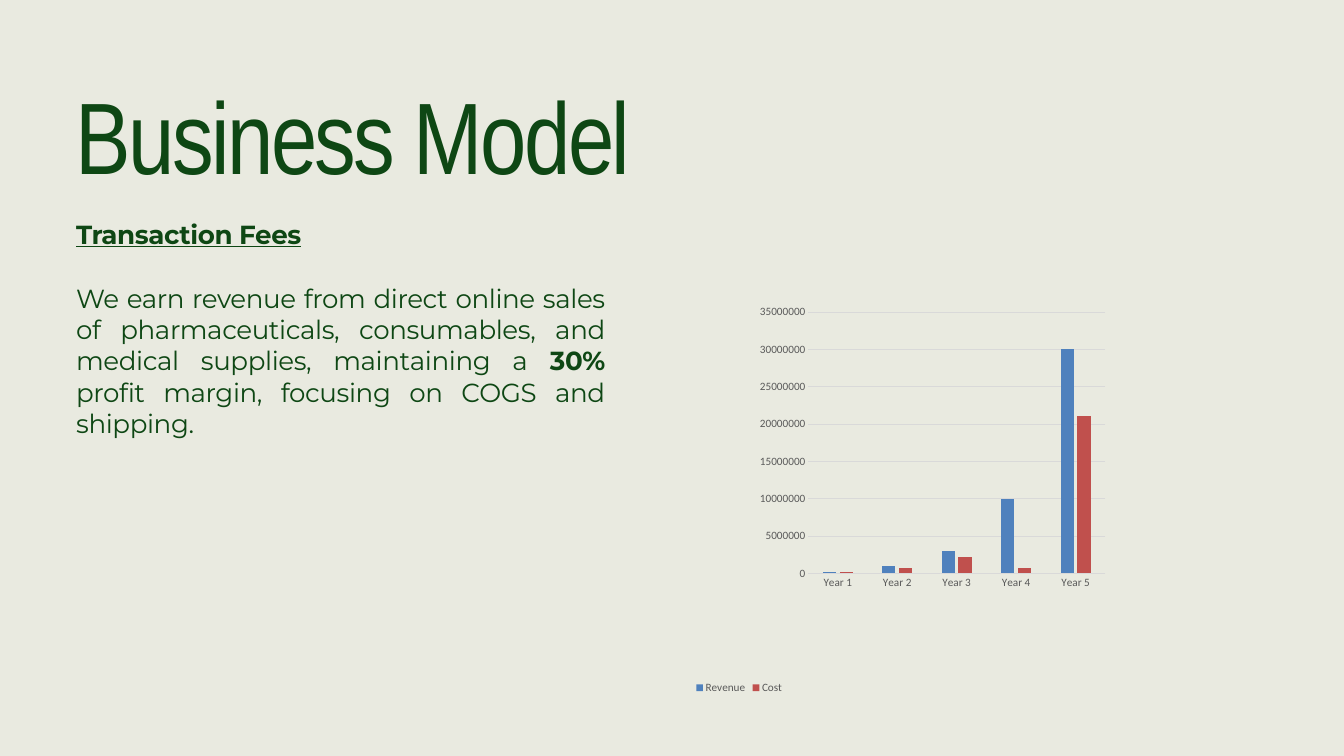
from pptx import Presentation
from pptx.chart.data import CategoryChartData
from pptx.dml.color import RGBColor
from pptx.enum.chart import XL_CHART_TYPE as ChartType, XL_LEGEND_POSITION as LegendPos, XL_TICK_MARK as Tick
from pptx.enum.text import MSO_AUTO_SIZE as AutoSize, PP_ALIGN as Align
from pptx.oxml import parse_xml
from pptx.oxml.ns import nsdecls
from pptx.util import Pt


def color(hex_string):
    return RGBColor.from_string(hex_string)


def write(paragraph, text, *, size, font, fill, bold=False, underline=False, tracking=0):
    run = paragraph.add_run()
    run.text = text
    run.font.size = Pt(size)
    run.font.name = font
    run.font.color.rgb = color(fill)
    run.font.bold = bold
    run.font.underline = underline
    run._r.get_or_add_rPr().set("spc", str(round(tracking * 100)))


class Deck:
    """Holds the style and the current slide, and adds each kind of element."""

    BACKGROUND, GREEN, GRAY, RULE = "E9EAE0", "0E4714", "595959", "D9D9D9"
    TITLE_FONT, BODY_FONT, CHART_FONT = "Arial Narrow", "Montserrat", "Calibri"

    def __init__(self, width, height):
        self.presentation = Presentation()
        self.presentation.slide_width = Pt(width)
        self.presentation.slide_height = Pt(height)
        self.slide = self.presentation.slides.add_slide(self.presentation.slide_layouts[6])
        background = self.slide.background.fill
        background.solid()
        background.fore_color.rgb = color(self.BACKGROUND)

    def text_frame(self, *box):
        frame = self.slide.shapes.add_textbox(*map(Pt, box)).text_frame
        frame.word_wrap = True
        frame.auto_size = AutoSize.SHAPE_TO_FIT_TEXT
        frame.margin_left = frame.margin_right = frame.margin_top = frame.margin_bottom = 0
        return frame

    def title(self, text, *box):
        heading = self.text_frame(*box).paragraphs[0]
        heading.line_spacing = Pt(94.7)
        write(heading, text, size=108.8, font=self.TITLE_FONT, fill=self.GREEN, tracking=-2.7)

    def body(self, heading, pieces, *box):
        frame = self.text_frame(*box)
        style = dict(size=28, font=self.BODY_FONT, fill=self.GREEN, tracking=-0.4)
        subtitle, explanation = frame.paragraphs[0], frame.add_paragraph()
        for paragraph in (subtitle, explanation):
            paragraph.alignment = Align.JUSTIFY
            paragraph._p.get_or_add_pPr().set("marL", str(Pt(0.9)))
        explanation.space_before = Pt(35)
        write(subtitle, heading, bold=True, underline=True, **style)
        for text, bold in pieces:
            write(explanation, text, bold=bold, **style)

    def chart_font(self, font):
        font.size = Pt(12)
        font.name = self.CHART_FONT
        font.color.rgb = color(self.GRAY)

    def rule(self, line):
        line.width = Pt(0.75)
        line.color.rgb = color(self.RULE)

    def column_chart(self, years, series, plot_area, *box):
        data = CategoryChartData(number_format="General")
        data.categories = years
        for name, values, _ in series:
            data.add_series(name, values)
        chart = self.slide.shapes.add_chart(ChartType.COLUMN_CLUSTERED, *map(Pt, box), data).chart
        self.chart_font(chart.font)
        chart.has_title = False
        chart.has_legend = True
        chart.legend.position = LegendPos.BOTTOM
        chart.legend.include_in_layout = False
        self.chart_font(chart.legend.font)

        columns = chart.plots[0]
        columns.vary_by_categories = False
        columns.gap_width, columns.overlap = 219, -27
        for column, (_, _, fill) in zip(columns.series, series):
            column.format.fill.solid()
            column.format.fill.fore_color.rgb = color(fill)
            column.invert_if_negative = False

        for axis in (chart.category_axis, chart.value_axis):
            axis.major_tick_mark = axis.minor_tick_mark = Tick.NONE
            self.chart_font(axis.tick_labels.font)
        self.rule(chart.category_axis.format.line)
        chart.value_axis.format.line.fill.background()
        chart.value_axis.has_major_gridlines = True
        self.rule(chart.value_axis.major_gridlines.format.line)
        self.place_plot(chart, plot_area)

    def place_plot(self, chart, plot_area):
        modes = "".join(f'<c:{side}Mode val="edge"/>' for side in "xy")
        sizes = "".join(f'<c:{key} val="{value}"/>' for key, value in zip("xywh", plot_area))
        area = chart._chartSpace.chart.plotArea
        for layout in area.xpath("c:layout"):
            area.remove(layout)
        area.insert(0, parse_xml(
            f'<c:layout {nsdecls("c")}><c:manualLayout><c:layoutTarget val="inner"/>'
            f"{modes}{sizes}</c:manualLayout></c:layout>"))


def main():
    deck = Deck(1440, 810)
    deck.body("Transaction Fees", [
        ("We earn revenue from direct online sales of pharmaceuticals, consumables, "
         "and medical supplies, maintaining a ", False),
        ("30% ", True),
        ("profit margin, focusing on COGS and shipping.", False),
    ], 80.64, 233.5, 567.4, 239.8)
    deck.title("Business Model", 80.64, 114.5, 1278, 105)
    deck.column_chart(
        [f"Year {number}" for number in range(1, 6)],
        [("Revenue", (200000, 1000000, 3000000, 10000000, 30000000), "4F81BD"),
         ("Cost", (100000, 700000, 2100000, 700000, 21000000), "C0504D")],
        (0.582, 0.276, 0.354, 0.491), 342, 177, 900, 570)
    deck.presentation.save("out.pptx")


if __name__ == "__main__":
    main()
